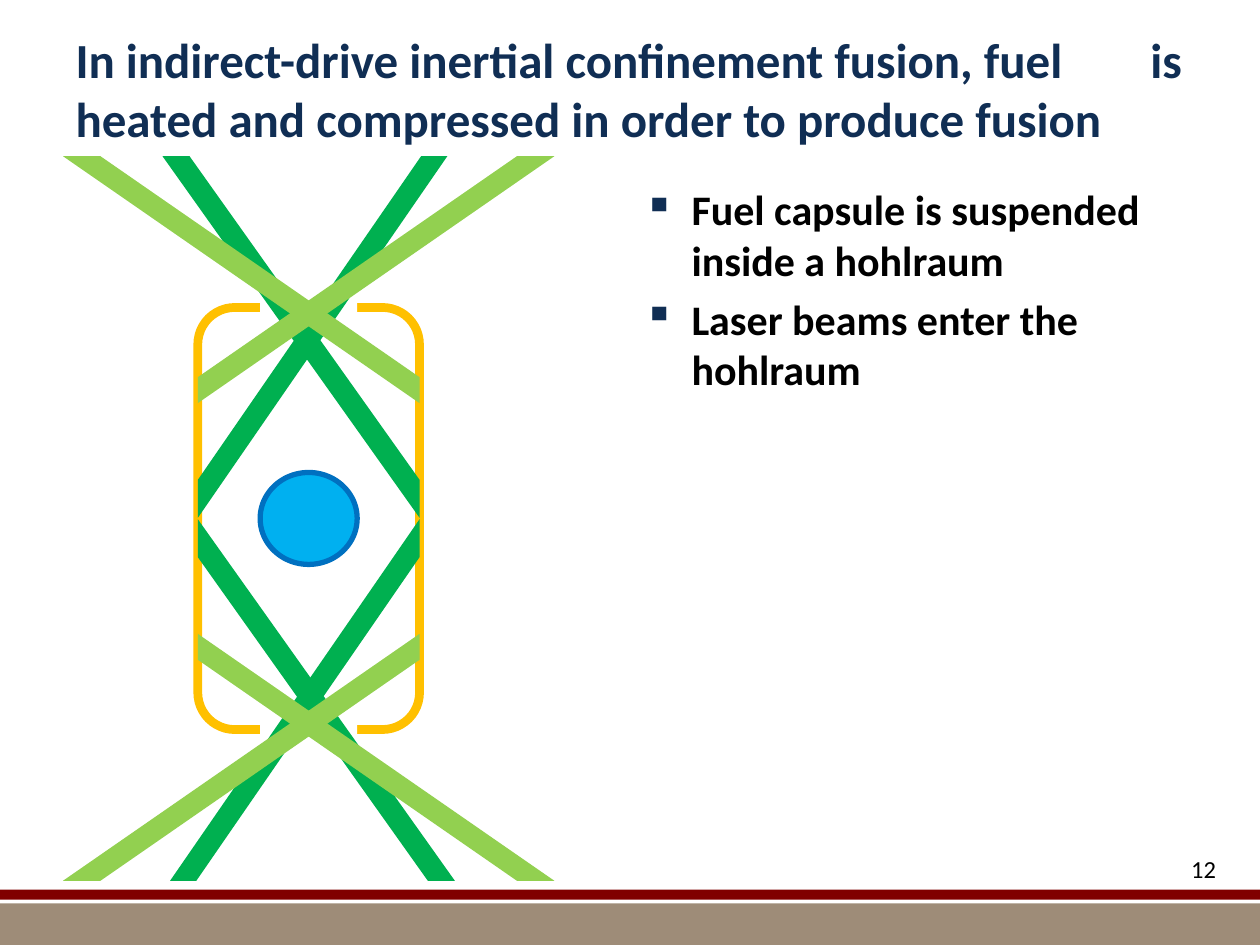
from pptx import Presentation
from pptx.dml.color import RGBColor
from pptx.enum.shapes import MSO_SHAPE
from pptx.enum.text import MSO_ANCHOR, PP_ALIGN
from pptx.oxml.ns import qn
from pptx.util import Inches, Pt
from lxml.etree import SubElement

NAVY = "102E54"
GREEN = "00B050"
LIME = "92D050"


def tint(code):
    """Turn a hex string into a colour."""
    return RGBColor.from_string(code)


def style(para, size, code, bold=False):
    """Set the font of a whole paragraph."""
    font = para.font
    font.name, font.size, font.bold = "Calibri", Pt(size), bold
    font.color.rgb = tint(code)


def draw(slide, kind, box, fill=None, line=None, width=0):
    """Add a preset shape with a plain fill and outline."""
    shape = slide.shapes.add_shape(kind, *map(Inches, box))
    shape.shadow.inherit = False
    if fill:
        shape.fill.solid()
        shape.fill.fore_color.rgb = tint(fill)
    else:
        shape.fill.background()
    if line:
        shape.line.color.rgb = tint(line)
        shape.line.width = Pt(width)
    else:
        shape.line.fill.background()
    return shape


def write(slide, box):
    """Add a wrapping text box and return its frame."""
    frame = slide.shapes.add_textbox(*map(Inches, box)).text_frame
    frame.word_wrap = True
    return frame


def bands(slide, box):
    """Draw the red rule and tan band inside the footer box."""
    left, top, width, high = box
    draw(slide, MSO_SHAPE.RECTANGLE, (left, top + 0.11, width, high - 0.11), "9E8C78")
    draw(slide, MSO_SHAPE.RECTANGLE, (left, top, width, 0.08), "800000")


def heading(slide, box, text):
    """Place the title, with a tab stop for its wide gap."""
    title = slide.shapes.title
    title.left, title.top, title.width, title.height = map(Inches, box)
    frame = title.text_frame
    frame.word_wrap = True
    frame.margin_right = 0
    frame.vertical_anchor = MSO_ANCHOR.MIDDLE
    frame.text = text
    para = frame.paragraphs[0]
    para.alignment = PP_ALIGN.LEFT
    tabs = SubElement(para._p.get_or_add_pPr(), qn("a:tabLst"))
    SubElement(tabs, qn("a:tab"), pos=str(Inches(8.53)), algn="l")
    style(para, 28, NAVY, True)


def points(slide, box, items):
    """Write the bulleted list."""
    frame = write(slide, box)
    for index, item in enumerate(items):
        para = frame.add_paragraph() if index else frame.paragraphs[0]
        para.text = item
        if index:
            para.space_before = Pt(4.8)
        props = para._p.get_or_add_pPr()
        props.set("marL", str(Inches(0.38)))
        props.set("indent", str(Inches(-0.38)))
        hue = SubElement(props, qn("a:buClr"))
        SubElement(hue, qn("a:srgbClr"), val=NAVY)
        SubElement(props, qn("a:buChar"), char="▪")
        style(para, 24, "000000", True)


def beam(slide, box, turn, fill):
    """Draw a stripe that fills the box after its turn."""
    left, top, width, high = box
    if turn % 180:
        shift = (width - high) / 2
        box = left + shift, top - shift, high, width
    stripe = draw(slide, MSO_SHAPE.DIAGONAL_STRIPE, box, fill)
    stripe.adjustments[0] = 0.895
    stripe.rotation = turn


def target(slide, box):
    """Draw the open hohlraum, its capsule and the eight beams."""
    left, top, width, high = box
    wall, span = left + 1.07, 1.76
    mid, axis = top + high / 2, left + width / 2
    draw(slide, MSO_SHAPE.ROUNDED_RECTANGLE,
         (wall, mid - 1.675, span, 3.35), line="FFC000", width=5)
    gap = 0.77
    draw(slide, MSO_SHAPE.RECTANGLE, (axis - gap / 2, mid - 2.27, gap, 4.73), "FFFFFF")
    draw(slide, MSO_SHAPE.OVAL, (axis - gap / 2, mid - 0.365, gap, 0.73),
         "00B0F0", "0070C0", 3)
    for fill, wide, cross, tall in ((GREEN, 1.98, 2.04, 2.87), (LIME, 2.83, 2.83, 1.96)):
        for turn in (0, 90, 180, 270):
            reach = cross if turn % 180 else wide
            start = wall if turn in (0, 270) else wall + span - reach
            edge = top if turn < 180 else top + high - tall
            beam(slide, (start, edge, reach, tall), turn, fill)


def number(slide, box, text):
    """Write the slide number."""
    para = write(slide, box).paragraphs[0]
    para.text = text
    para.alignment = PP_ALIGN.RIGHT
    style(para, 14, "000000")


def main():
    """Build the slide and save it."""
    deck = Presentation()
    deck.slide_width, deck.slide_height = Inches(10), Inches(7.5)
    slide = deck.slides.add_slide(deck.slide_layouts[5])
    bands(slide, (0, 7.06, 10, 0.44))
    heading(slide, (0.5, 0.16, 9, 1.08),
            "In indirect-drive inertial confinement fusion, fuel\tis heated "
            "and compressed in order to produce fusion")
    number(slide, (9.08, 6.73, 0.67, 0.41), "12")
    points(slide, (5.01, 1.41, 4.49, 5.18),
           ("Fuel capsule is suspended inside a hohlraum",
            "Laser beams enter the hohlraum"))
    target(slide, (0.5, 1.24, 3.9, 5.75))
    deck.save("out.pptx")


if __name__ == "__main__":
    main()
